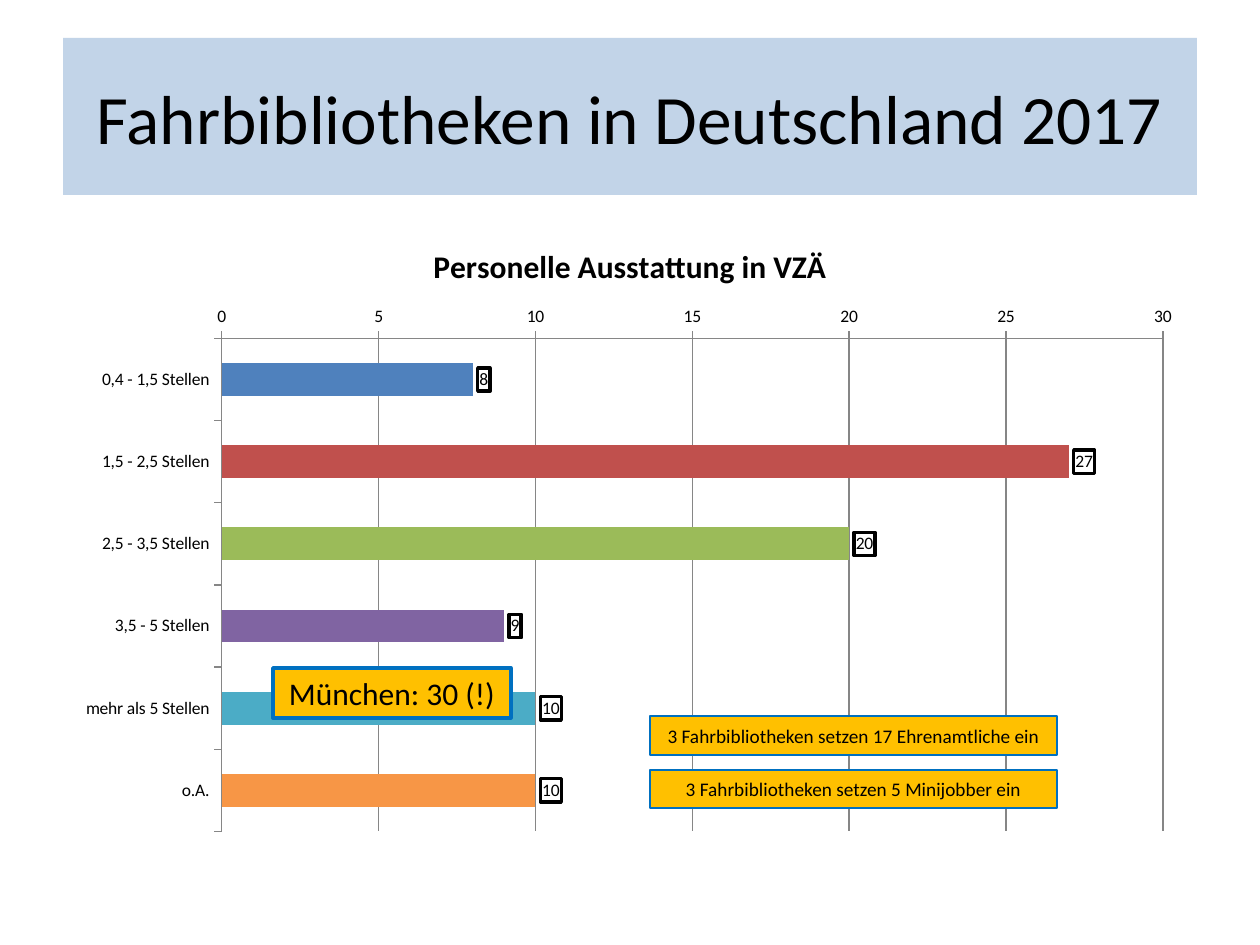
"""Build the slide on staffing of mobile libraries in Germany, 2017."""
from dataclasses import dataclass

from lxml import etree
from pptx import Presentation
from pptx.chart.data import CategoryChartData
from pptx.dml.color import RGBColor
from pptx.enum.chart import XL_CHART_TYPE, XL_LABEL_POSITION, XL_TICK_MARK
from pptx.enum.shapes import MSO_SHAPE
from pptx.enum.text import MSO_ANCHOR, MSO_AUTO_SIZE, PP_ALIGN
from pptx.oxml import parse_xml
from pptx.oxml.ns import nsdecls, qn
from pptx.util import Pt

PX = 7257.14
FONT = "Calibri"
BAR = XL_CHART_TYPE.BAR_CLUSTERED
END = XL_LABEL_POSITION.OUTSIDE_END
OUT = XL_TICK_MARK.OUTSIDE
RECT = MSO_SHAPE.RECTANGLE
MID = MSO_ANCHOR.MIDDLE
FIXED = MSO_AUTO_SIZE.NONE
CENTER = PP_ALIGN.CENTER
COLORS = {"ink": "000000", "blue": "4F81BD", "gold": "FFC000",
          "edge": "0070C0", "grid": "868686"}
FRAME = {"word_wrap": True, "auto_size": FIXED, "vertical_anchor": MID}
AXIS = {"major_tick_mark": OUT, "minor_tick_mark": XL_TICK_MARK.NONE}
LABELS = {"show_value": True, "position": END}
LAYOUT = {"xMode": "edge", "yMode": "edge", "x": 0.14, "y": 0.19,
          "w": 0.83, "h": 0.79}


@dataclass
class Box:
    left: int
    top: int
    width: int
    height: int

    def place(self) -> list[int]:
        sides = (self.left, self.top, self.width, self.height)
        return [round(side * PX) for side in sides]


@dataclass
class Note:
    text: str
    box: Box
    size: int
    line: float


@dataclass
class Group:
    name: str
    count: int
    color: str


TITLE = Box(63, 38, 1134, 157)
CHART = Box(63, 220, 1134, 624)
NOTES = [
    Note("München: 30 (!)", Box(273, 668, 238, 50), 18, 2),
    Note("3 Fahrbibliotheken setzen 17 Ehrenamtliche ein",
         Box(650, 716, 407, 39), 11, 0.75),
    Note("3 Fahrbibliotheken setzen 5 Minijobber ein",
         Box(650, 770, 407, 38), 11, 0.75),
]
GROUPS = [
    Group("0,4 - 1,5 Stellen", 8, "4F81BD"),
    Group("1,5 - 2,5 Stellen", 27, "C0504D"),
    Group("2,5 - 3,5 Stellen", 20, "9BBB59"),
    Group("3,5 - 5 Stellen", 9, "8064A2"),
    Group("mehr als 5 Stellen", 10, "4BACC6"),
    Group("o.A.", 10, "F79646"),
]


def apply(target, values: dict) -> None:
    for name, value in values.items():
        setattr(target, name, value)


def paint(fill, color: str) -> None:
    fill.solid()
    fill.fore_color.rgb = RGBColor.from_string(color)


def style(font, size: float, bold: bool = False) -> None:
    apply(font, {"name": FONT, "size": Pt(size), "bold": bold})
    font.color.rgb = RGBColor.from_string(COLORS["ink"])


def write(frame, text: str, size: float, bold: bool = False) -> None:
    para = frame.paragraphs[0]
    para.alignment = CENTER
    run = para.add_run()
    run.text = text
    style(run.font, size, bold)


def add_title(slide) -> None:
    shape = slide.shapes.title
    names = ("left", "top", "width", "height")
    apply(shape, dict(zip(names, TITLE.place())))
    paint(shape.fill, COLORS["blue"])
    tint = shape.fill._xPr.find(".//" + qn("a:srgbClr"))
    etree.SubElement(tint, qn("a:alpha"), val="34000")
    apply(shape.text_frame, FRAME)
    write(shape.text_frame, "Fahrbibliotheken in Deutschland 2017", 39.6)


def add_note(slide, note: Note) -> None:
    shape = slide.shapes.add_shape(RECT, *note.box.place())
    shape.shadow.inherit = False
    paint(shape.fill, COLORS["gold"])
    paint(shape.line.fill, COLORS["edge"])
    shape.line.width = Pt(note.line)
    apply(shape.text_frame, FRAME)
    write(shape.text_frame, note.text, note.size)


def fix_plot(chart) -> None:
    area = chart._chartSpace.chart.plotArea
    for old in area.findall(qn("c:layout")):
        area.remove(old)
    layout = etree.Element(qn("c:layout"))
    manual = etree.SubElement(layout, qn("c:manualLayout"))
    etree.SubElement(manual, qn("c:layoutTarget"), val="inner")
    for name, value in LAYOUT.items():
        etree.SubElement(manual, qn("c:" + name), val=str(value))
    area.insert(0, layout)


def frame_labels(labels) -> None:
    apply(labels, LABELS)
    style(labels.font, 10)
    border = parse_xml(
        f'<c:spPr {nsdecls("c", "a")}><a:noFill/><a:ln w="25400"><a:solidFill>'
        f'<a:srgbClr val="{COLORS["ink"]}"/></a:solidFill></a:ln></c:spPr>')
    labels._element.find(qn("c:txPr")).addprevious(border)


def add_chart(slide) -> None:
    data = CategoryChartData()
    data.categories = [group.name for group in GROUPS]
    data.add_series("Series 1", [group.count for group in GROUPS])
    chart = slide.shapes.add_chart(BAR, *CHART.place(), data).chart
    style(chart.font, 10)
    apply(chart, {"has_legend": False, "has_title": True})
    write(chart.chart_title.text_frame, "Personelle Ausstattung in VZÄ", 18, True)
    cats, vals = chart.category_axis, chart.value_axis
    for axis in (cats, vals):
        apply(axis, AXIS)
        paint(axis.format.line.fill, COLORS["grid"])
    cats.reverse_order = True
    apply(vals, {"minimum_scale": 0, "maximum_scale": 30, "major_unit": 5})
    paint(vals.major_gridlines.format.line.fill, COLORS["grid"])
    plot = chart.plots[0]
    apply(plot, {"gap_width": 150, "vary_by_categories": False})
    series = plot.series[0]
    for index, group in enumerate(GROUPS):
        paint(series.points[index].format.fill, group.color)
    frame_labels(series.data_labels)
    fix_plot(chart)


def main() -> None:
    deck = Presentation()
    apply(deck, {"slide_width": round(1260 * PX), "slide_height": round(945 * PX)})
    slide = deck.slides.add_slide(deck.slide_layouts[5])
    add_title(slide)
    add_chart(slide)
    for note in NOTES:
        add_note(slide, note)
    deck.save("out.pptx")


if __name__ == "__main__":
    main()
